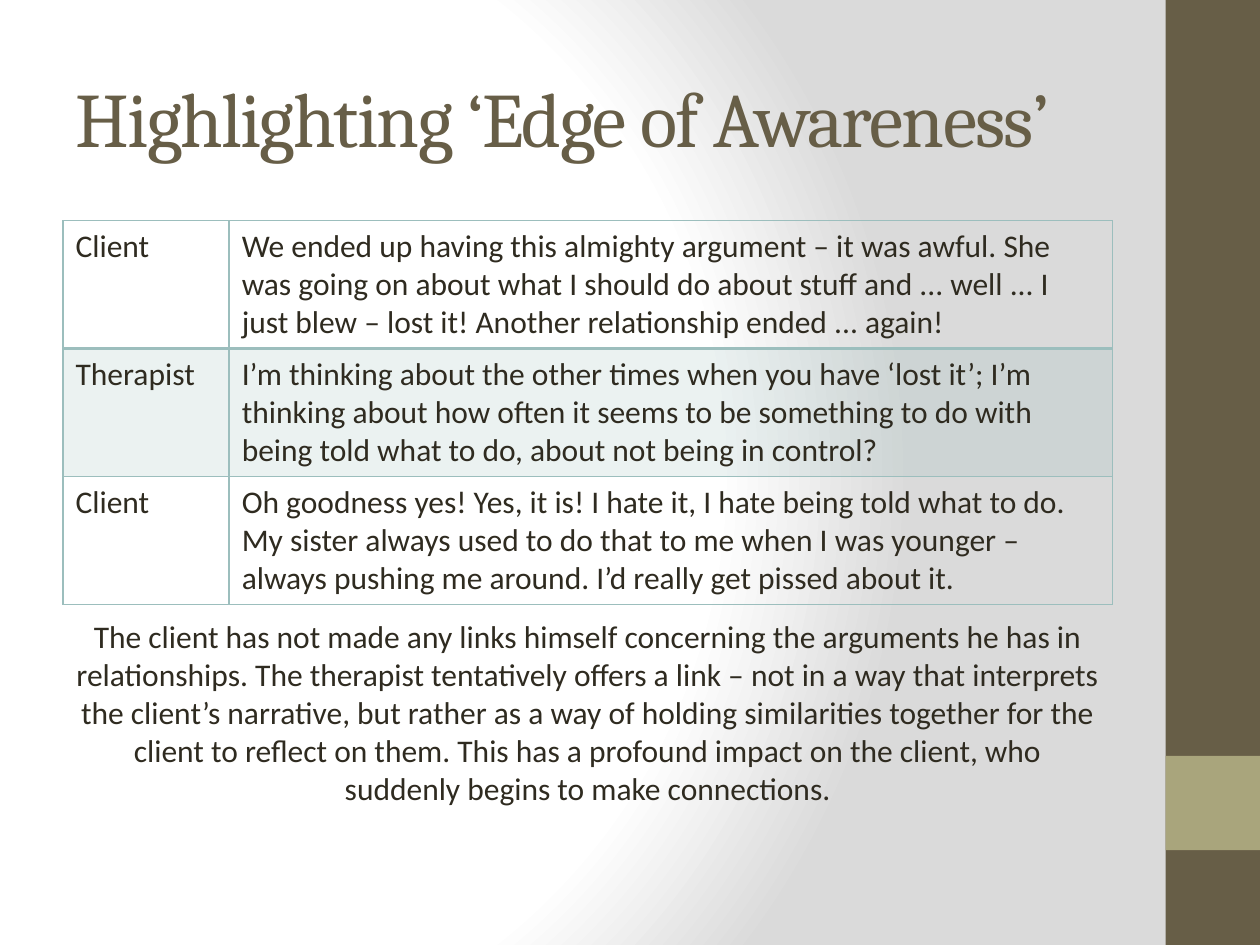
from collections import namedtuple

from lxml.etree import SubElement
from pptx import Presentation
from pptx.dml.color import RGBColor
from pptx.enum.shapes import MSO_SHAPE
from pptx.enum.text import MSO_ANCHOR, MSO_AUTO_SIZE, PP_ALIGN
from pptx.oxml import parse_xml
from pptx.oxml.ns import nsdecls, qn
from pptx.util import Cm, Pt

Box = namedtuple("Box", "left top width height")

BROWN, SAGE, TEAL, INK = "675E47", "A9A57C", "9CBEBD", "2F2B20"
LABEL_WIDTH = 3.35
DIALOGUE = [
    ("Client", "We ended up having this almighty argument – it was awful. She was going on "
               "about what I should do about stuff and ... well ... I just blew – lost it! "
               "Another relationship ended ... again!"),
    ("Therapist", "I’m thinking about the other times when you have ‘lost it’; I’m thinking "
                  "about how often it seems to be something to do with being told what to do, "
                  "about not being in control?"),
    ("Client", "Oh goodness yes! Yes, it is! I hate it, I hate being told what to do. My "
               "sister always used to do that to me when I was younger – always pushing me "
               "around. I’d really get pissed about it."),
]
COMMENT = ("The client has not made any links himself concerning the arguments he has in "
           "relationships. The therapist tentatively offers a link – not in a way that "
           "interprets the client’s narrative, but rather as a way of holding similarities "
           "together for the client to reflect on them. This has a profound impact on the "
           "client, who suddenly begins to make connections.")


def color(value):
    return RGBColor.from_string(value)


def lengths(box):
    return [Cm(value) for value in box]


def write(frame, text, font="Calibri", size=18, ink=INK, align=PP_ALIGN.LEFT, spacing=None):
    para = frame.paragraphs[0]
    para.alignment = align
    span = para.add_run()
    span.text = text
    span.font.name = font
    span.font.size = Pt(size)
    span.font.color.rgb = color(ink)
    if spacing is not None:
        span.font._element.set("spc", str(int(spacing * 100)))


def add_background(page):
    stops = "".join(
        f'<a:gs pos="{position * 1000}"><a:srgbClr val="{value}"/></a:gs>'
        for position, value in ((0, "FFFFFF"), (75, "FFFFFF"), (100, "DADADA")))
    page._element.cSld.insert(0, parse_xml(
        f'<p:bg {nsdecls("p", "a")}><p:bgPr><a:gradFill rotWithShape="1">'
        f'<a:gsLst>{stops}</a:gsLst><a:path path="circle">'
        '<a:fillToRect l="20000" t="50000" r="100000" b="50000"/></a:path>'
        '</a:gradFill><a:effectLst/></p:bgPr></p:bg>'))


def add_sidebar(page, box):
    accent = Box(box.left, box.top + box.height * 0.8, box.width, box.width)
    for part, fill in ((box, BROWN), (accent, SAGE)):
        bar = page.shapes.add_shape(MSO_SHAPE.RECTANGLE, *lengths(part))
        bar.shadow.inherit = False
        bar.fill.solid()
        bar.fill.fore_color.rgb = color(fill)
        bar.line.fill.background()


def add_title(page, box, text):
    title = page.shapes.title
    title.left, title.top, title.width, title.height = lengths(box)
    frame = title.text_frame
    frame.auto_size = MSO_AUTO_SIZE.NONE
    frame.vertical_anchor = MSO_ANCHOR.MIDDLE
    write(frame, text, font="Cambria", size=44, ink=BROWN, spacing=-1)


def add_borders(cell, **widths):
    properties = cell._tc.get_or_add_tcPr()
    for index, (side, width) in enumerate(widths.items()):
        properties.insert(index, parse_xml(
            f'<a:ln{side} {nsdecls("a")} w="{Pt(width)}"><a:solidFill>'
            f'<a:srgbClr val="{TEAL}"/></a:solidFill></a:ln{side}>'))


def fill_cell(cell, shaded):
    if not shaded:
        cell.fill.background()
        return
    cell.fill.solid()
    cell.fill.fore_color.rgb = color(TEAL)
    tint = cell._tc.tcPr.find(".//" + qn("a:srgbClr"))
    SubElement(tint, qn("a:alpha")).set("val", "20000")


def add_dialogue(page, box, rows):
    table = page.shapes.add_table(len(rows), 2, *lengths(box)).table
    table.first_row = table.horz_banding = False
    table.columns[0].width = Cm(LABEL_WIDTH)
    table.columns[1].width = Cm(box.width - LABEL_WIDTH)
    for row, texts in enumerate(rows):
        for column, text in enumerate(texts):
            cell = table.cell(row, column)
            write(cell.text_frame, text)
            fill_cell(cell, shaded=row % 2 == 1)
            add_borders(cell, L=1, R=1, T=2 if row == 1 else 1, B=2 if row == 0 else 1)


def add_comment(page, box, text):
    frame = page.shapes.add_textbox(*lengths(box)).text_frame
    frame.word_wrap = True
    frame.auto_size = MSO_AUTO_SIZE.SHAPE_TO_FIT_TEXT
    write(frame, text, align=PP_ALIGN.CENTER)


def main():
    deck = Presentation()
    deck.slide_width, deck.slide_height = Cm(25.4), Cm(19.05)
    page = deck.slides.add_slide(deck.slide_layouts[5])
    left, width = 1.27, 21.16
    add_background(page)
    add_sidebar(page, Box(23.5, 0, 1.9, 19.05))
    add_title(page, Box(left, 0.76, width, 3.18), "Highlighting ‘Edge of Awareness’")
    add_dialogue(page, Box(left, 4.45, width, 7.62), DIALOGUE)
    add_comment(page, Box(left, 12.32, width, 4.88), COMMENT)
    deck.save("out.pptx")


if __name__ == "__main__":
    main()
